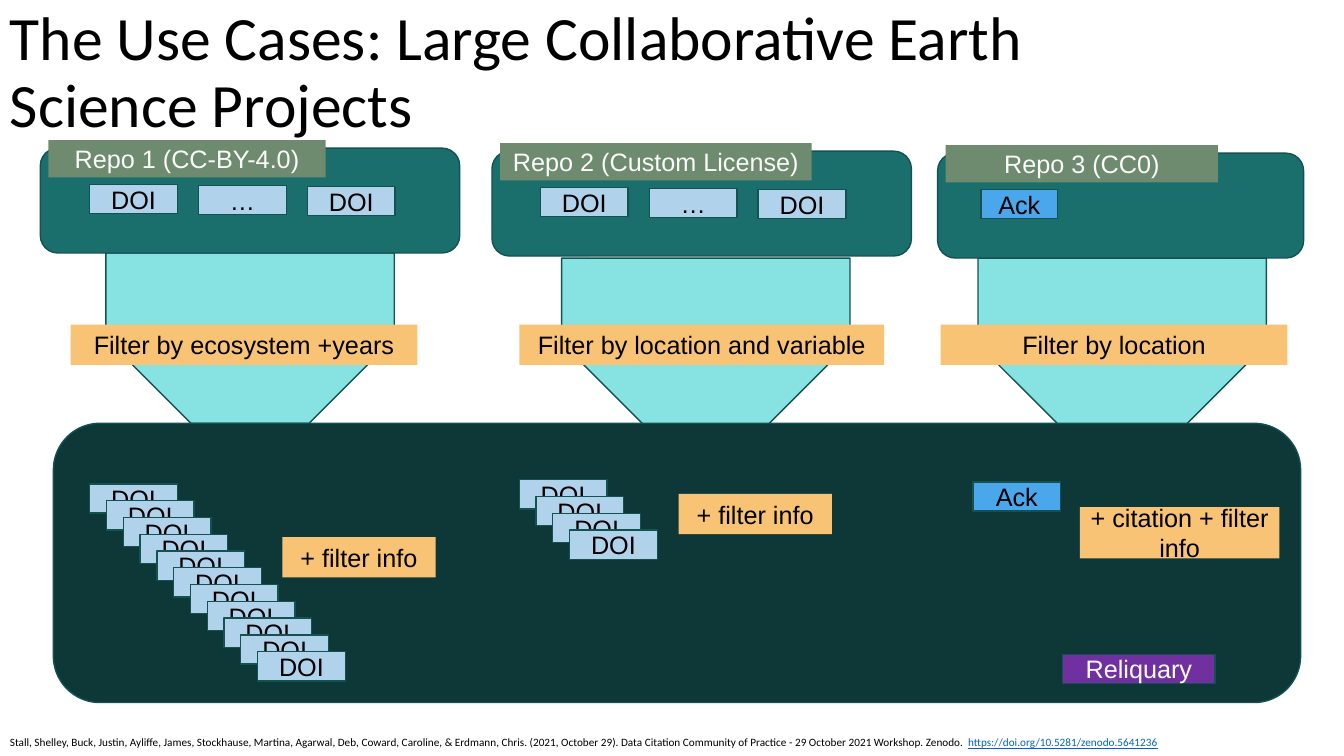
from pptx import Presentation
from pptx.dml.color import RGBColor
from pptx.enum.shapes import MSO_SHAPE as Shape
from pptx.enum.text import MSO_ANCHOR as Anchor, PP_ALIGN as Align
from pptx.util import Inches, Pt

BLACK = RGBColor(0x00, 0x00, 0x00)
WHITE = RGBColor(0xFF, 0xFF, 0xFF)
OFF_WHITE = RGBColor(0xFA, 0xFB, 0xFA)
OUTLINE = RGBColor(0x13, 0x52, 0x51)
AQUA = RGBColor(0x86, 0xE3, 0xE1)
TEAL = RGBColor(0x1A, 0x6F, 0x6D)
DARK_TEAL = RGBColor(0x0D, 0x38, 0x37)
SAGE = RGBColor(0x6F, 0x8B, 0x6F)
ORANGE = RGBColor(0xF8, 0xC3, 0x74)
PALE_BLUE = RGBColor(0xB0, 0xD2, 0xEB)
BLUE = RGBColor(0x4B, 0xA7, 0xEC)
PURPLE = RGBColor(0x70, 0x30, 0xA0)
LINK = RGBColor(0x05, 0x63, 0xC1)

# The slide is a grid of one-inch cells: 13.33 columns by 7.5 rows
COLUMNS, ROWS = 13.33, 7.5
CARD_W, CARD_H = 0.87, 0.29
STACK_STEP = 0.1665

# Per repository: box, label, label width, cards, card width and inset
REPOS = [
    ((0.4, 1.47, 4.16, 1.04), "Repo 1 (CC-BY-4.0)", 2.75,
     ["DOI", "…", "DOI"], CARD_W, 0.49),
    ((4.88, 1.5, 4.16, 1.04), "Repo 2 (Custom License)", 3.09,
     ["DOI", "…", "DOI"], CARD_W, 0.48),
    ((9.3, 1.52, 3.63, 1.04), "Repo 3 (CC0)", 2.7, ["Ack"], 0.76, 0.43),
]
# Per flow: arrow box, filter text, left and width of the filter bar
FLOWS = [
    ((1.05, 2.51, 2.86, 1.69), "Filter by ecosystem +years", 0.7, 3.44),
    ((5.57, 2.56, 2.86, 1.68), "Filter by location and variable", 5.15, 3.62),
    ((9.7, 2.56, 2.86, 1.71), "Filter by location", 9.33, 3.44),
]
# Per result, relative to the reliquary: corner, card, count, note, note box
RESULTS = [
    ((0.36, 0.6), "DOI", 11, "+ filter info", (2.27, 1.13, 1.52, 0.4)),
    ((4.62, 0.56), "DOI", 4, "+ filter info", (6.2, 0.7, 1.52, 0.4)),
    ((9.12, 0.58), "Ack", 1, "+ citation + filter info",
     (10.18, 0.83, 1.98, 0.51)),
]
CARD_FILLS = {"DOI": PALE_BLUE, "…": PALE_BLUE, "Ack": BLUE}


def add_run(paragraph, text, **font_values):
    run = paragraph.add_run()
    run.text = text
    color = font_values.pop("color")
    for key, value in font_values.items():
        setattr(run.font, key, value)
    run.font.color.rgb = color


def add_block(slide, box, fill, text="", color=BLACK, kind=Shape.RECTANGLE,
              outlined=False):
    block = slide.shapes.add_shape(kind, *map(Inches, box))
    block.shadow.inherit = False
    block.fill.solid()
    block.fill.fore_color.rgb = fill
    if outlined:
        block.line.color.rgb = OUTLINE
        block.line.width = Pt(1)
    else:
        block.line.fill.background()
    if text:
        frame = block.text_frame
        frame.word_wrap = True
        frame.vertical_anchor = Anchor.MIDDLE
        frame.paragraphs[0].alignment = Align.CENTER
        add_run(frame.paragraphs[0], text, name="Arial", size=Pt(18),
                color=color)
    return block


def add_card(slide, left, top, text, width=CARD_W):
    add_block(slide, (left, top, width, CARD_H), CARD_FILLS[text], text,
              outlined=True)


def add_words(slide, box, anchor):
    frame = slide.shapes.add_textbox(*map(Inches, box)).text_frame
    frame.word_wrap = True
    frame.vertical_anchor = anchor
    return frame.paragraphs[0]


def add_title(slide, box):
    heading = add_words(slide, box, Anchor.MIDDLE)
    heading.line_spacing = 0.9
    add_run(heading, "The Use Cases: Large Collaborative Earth Science Projects",
            name="Calibri", size=Pt(44), color=BLACK)


def add_flow(slide, box, text, bar_left, bar_width):
    arrow = add_block(slide, box, AQUA, kind=Shape.SNIP_2_SAME_RECTANGLE,
                      outlined=True)
    arrow.adjustments[0] = 0.5
    arrow.adjustments[1] = 0
    arrow.rotation = 180
    add_block(slide, (bar_left, 3.22, bar_width, 0.4), ORANGE, text)


def add_repo(slide, box, label, label_width, cards, card_width, inset):
    left, top = box[:2]
    add_block(slide, box, TEAL, kind=Shape.ROUNDED_RECTANGLE, outlined=True)
    for i, card in enumerate(cards):
        add_card(slide, left + inset + 1.08 * i, top + 0.36 + 0.01 * i, card,
                 card_width)
    add_block(slide, (left + 0.08, top - 0.08, label_width, 0.37), SAGE, label,
              OFF_WHITE)


def add_reliquary(slide, box):
    left, top, width, height = box
    add_block(slide, box, DARK_TEAL, kind=Shape.ROUNDED_RECTANGLE,
              outlined=True)
    add_block(slide, (left + width - 2.36, top + height - 0.48, 1.51, CARD_H),
              PURPLE, "Reliquary", WHITE, outlined=True)
    for (dx, dy), card, count, note, (nx, ny, nw, nh) in RESULTS:
        for i in range(count):
            shift = STACK_STEP * i
            add_card(slide, left + dx + shift, top + dy + shift, card)
        add_block(slide, (left + nx, top + ny, nw, nh), ORANGE, note)


def add_citation(slide, box):
    citation = add_words(slide, box, Anchor.TOP)
    look = {"name": "Calibri", "size": Pt(8)}
    add_run(citation, "Stall, Shelley, Buck, Justin, Ayliffe, James, Stockhause, "
            "Martina, Agarwal, Deb, Coward, Caroline, & Erdmann, Chris. "
            "(2021, October 29). Data Citation Community of Practice - "
            "29 October 2021 Workshop. Zenodo. ", color=BLACK, **look)
    add_run(citation, "https://doi.org/10.5281/zenodo.5641236", color=LINK,
            underline=True, **look)


def main():
    deck = Presentation()
    deck.slide_width, deck.slide_height = Inches(COLUMNS), Inches(ROWS)
    slide = deck.slides.add_slide(deck.slide_layouts[6])
    add_title(slide, (0, 0.01, 11.5, 1.45))
    for flow in FLOWS:
        add_flow(slide, *flow)
    for repo in REPOS:
        add_repo(slide, *repo)
    add_reliquary(slide, (0.53, 4.2, 12.37, 2.77))
    add_citation(slide, (0, 7.25, 12.36, 0.24))
    deck.save("out.pptx")


if __name__ == "__main__":
    main()
